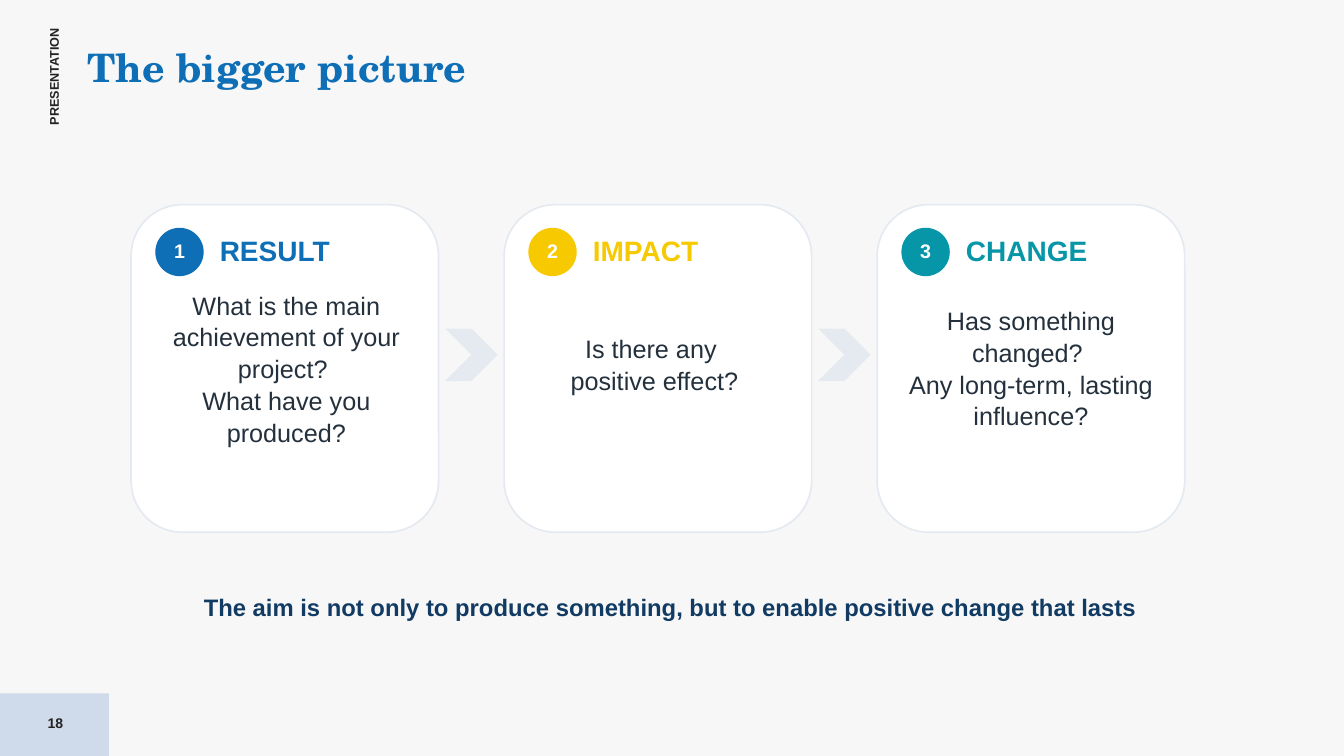
from dataclasses import dataclass

import pptx
import pptx.dml.color
import pptx.enum.shapes
import pptx.enum.text
import pptx.util

COLOURS = {
    "background": "F7F7F7", "corner": "CFDBEA", "ink": "222222",
    "blue": "0E6EB6", "yellow": "F6C900", "teal": "0796A8",
    "white": "FFFFFF", "mist": "E4EAF0", "body": "24313D", "navy": "123B63",
}
COLUMNS, ROWS = 133.3, 75
SLIDE_WIDTH, SLIDE_HEIGHT = pptx.util.Inches(13.33), pptx.util.Inches(7.5)
FIRST_CARD, CARD_PITCH, CARD_TOP = 13, 37, 20.3
CARD_WIDTH, CARD_HEIGHT = 30.5, 32.5
CHEVRON_SIZE = 5.2
BADGE_SIZE = 4.8

Preset = pptx.enum.shapes.MSO_SHAPE
Align = pptx.enum.text.PP_ALIGN
Anchor = pptx.enum.text.MSO_ANCHOR


@dataclass(frozen=True)
class Area:
    column: float
    row: float
    columns: float
    rows: float

    def lengths(self) -> tuple[int, int, int, int]:
        return (
            round(SLIDE_WIDTH * self.column / COLUMNS),
            round(SLIDE_HEIGHT * self.row / ROWS),
            round(SLIDE_WIDTH * self.columns / COLUMNS),
            round(SLIDE_HEIGHT * self.rows / ROWS),
        )


@dataclass(frozen=True)
class Style:
    size: float
    colour: str
    bold: bool = True
    font: str = "Arial"
    align: Align = Align.CENTER
    anchor: Anchor = Anchor.MIDDLE
    spacing: float = 1.0
    inset: float = 0
    wrap: bool = True
    grow: bool = True


@dataclass(frozen=True)
class Step:
    heading: str
    colour: str
    questions: tuple[str, ...]
    body: Area


STEPS = (
    Step("RESULT", "blue",
         ("What is the main achievement of your project? ", "What have you produced?"),
         Area(0.7, 8.4, 29.4, 15.6)),
    Step("IMPACT", "yellow", ("Is there any ", "positive effect?"),
         Area(0.3, 12.5, 29.2, 6.5)),
    Step("CHANGE", "teal",
         ("Has something changed? ", "Any long-term, lasting influence?"),
         Area(1.4, 9.9, 27.7, 12.5)),
)


def colour_of(name: str) -> pptx.dml.color.RGBColor:
    return pptx.dml.color.RGBColor.from_string(COLOURS[name])


def draw_shape(slide, preset: Preset, area: Area, fill: str, line: str = ""):
    drawn = slide.shapes.add_shape(preset, *area.lengths())
    drawn.shadow.inherit = False
    drawn.fill.solid()
    drawn.fill.fore_color.rgb = colour_of(fill)
    if line:
        drawn.line.color.rgb = colour_of(line)
        drawn.line.width = pptx.util.Pt(1.2)
    else:
        drawn.line.fill.background()
    return drawn


def draw_text(slide, area: Area, style: Style, *wording: str):
    drawn = slide.shapes.add_textbox(*area.lengths())
    frame = drawn.text_frame
    frame.word_wrap = style.wrap
    if style.grow:
        frame.auto_size = pptx.enum.text.MSO_AUTO_SIZE.SHAPE_TO_FIT_TEXT
    frame.vertical_anchor = style.anchor
    inset = pptx.util.Inches(style.inset)
    frame.margin_left = frame.margin_right = inset
    frame.margin_top = frame.margin_bottom = inset
    for index, words in enumerate(wording):
        paragraph = frame.add_paragraph() if index else frame.paragraphs[0]
        paragraph.alignment = style.align
        paragraph.line_spacing = style.spacing
        run = paragraph.add_run()
        run.text = words
        run.font.name = style.font
        run.font.size = pptx.util.Pt(style.size)
        run.font.bold = style.bold
        run.font.color.rgb = colour_of(style.colour)
    return drawn


def draw_step(slide, index: int, step: Step) -> None:
    left = FIRST_CARD + index * CARD_PITCH
    draw_shape(slide, Preset.ROUNDED_RECTANGLE,
               Area(left, CARD_TOP, CARD_WIDTH, CARD_HEIGHT), "white", "mist")
    draw_shape(slide, Preset.OVAL,
               Area(left + 2.4, CARD_TOP + 2.3, BADGE_SIZE, BADGE_SIZE), step.colour)
    draw_text(slide, Area(left + 2.4, CARD_TOP + 2.5, BADGE_SIZE, 4.2),
              Style(14, "white"), str(index + 1))
    draw_text(slide, Area(left + 8.8, CARD_TOP + 2.9, 19, 3.4),
              Style(20, step.colour, align=Align.LEFT, anchor=Anchor.TOP), step.heading)
    body = Area(left + step.body.column, CARD_TOP + step.body.row,
                step.body.columns, step.body.rows)
    draw_text(slide, body, Style(18, "body", bold=False, spacing=1.05, inset=0.02),
              *step.questions)
    if index < len(STEPS) - 1:
        gap = CARD_PITCH - CARD_WIDTH
        draw_shape(slide, Preset.CHEVRON,
                   Area(left + CARD_WIDTH + (gap - CHEVRON_SIZE) / 2,
                        CARD_TOP + 12.3, CHEVRON_SIZE, CHEVRON_SIZE), "mist")


def main() -> None:
    deck = pptx.Presentation()
    deck.slide_width, deck.slide_height = SLIDE_WIDTH, SLIDE_HEIGHT
    slide = deck.slides.add_slide(deck.slide_layouts[6])
    slide.background.fill.solid()
    slide.background.fill.fore_color.rgb = colour_of("background")

    draw_shape(slide, Preset.RECTANGLE, Area(0, 68.8, 10.8, 6.2), "corner")
    section = draw_text(slide, Area(0.4, 6.7, 9.9, 1.5),
                        Style(9, "ink", align=Align.LEFT, anchor=Anchor.TOP, wrap=False),
                        "PRESENTATION")
    section.rotation = 270
    draw_text(slide, Area(0, 69.7, 11, 4), Style(10, "ink", grow=False), "18")
    draw_text(slide, Area(8.7, 4.3, 117, 4.7),
              Style(28, "blue", font="TeX Gyre Schola", align=Align.LEFT,
                    anchor=Anchor.TOP),
              "The bigger picture")
    for index, step in enumerate(STEPS):
        draw_step(slide, index, step)
    draw_text(slide, Area(FIRST_CARD, 58.8, 107, 2.9), Style(17, "navy"),
              "The aim is not only to produce something, "
              "but to enable positive change that lasts")
    deck.save("out.pptx")


if __name__ == "__main__":
    main()
